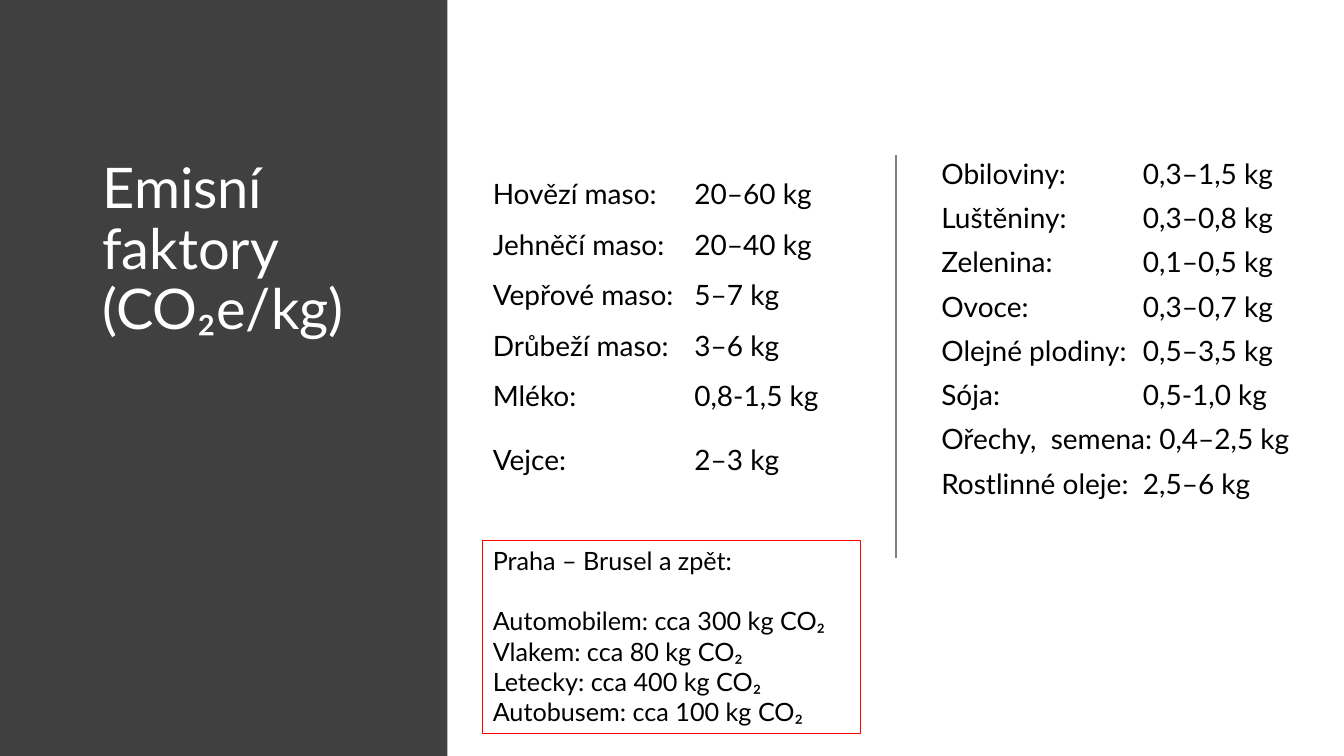
from lxml import etree
from pptx import Presentation
from pptx.dml.color import RGBColor
from pptx.enum.shapes import MSO_CONNECTOR, MSO_SHAPE
from pptx.enum.text import MSO_ANCHOR, PP_ALIGN
from pptx.oxml.ns import qn
from pptx.util import Pt

DARK = RGBColor(0x40, 0x40, 0x40)
GRAY = RGBColor(0x80, 0x80, 0x80)
RED = RGBColor(0xFF, 0, 0)
WHITE = RGBColor(0xFF, 0xFF, 0xFF)
BLACK = RGBColor(0, 0, 0)

FONT = "Lato"
TOP = 110.9
LEFT_COLUMN, RIGHT_COLUMN = 344.9, 665.3
COLUMN_WIDTH, COLUMN_HEIGHT = 270, 343.4
VALUE_TAB = 144

ANIMAL_FOODS = [
    "Hovězí maso:\t20–60 kg",
    "Jehněčí maso:\t20–40 kg",
    "Vepřové maso:\t5–7 kg",
    "Drůbeží maso:\t3–6 kg",
    "Mléko:\t0,8-1,5 kg",
    "Vejce:\t2–3 kg",
]
PLANT_FOODS = [
    "Obiloviny:\t0,3–1,5 kg",
    "Luštěniny:\t0,3–0,8 kg",
    "Zelenina:\t0,1–0,5 kg",
    "Ovoce:\t0,3–0,7 kg",
    "Olejné plodiny:\t0,5–3,5 kg",
    "Sója:\t0,5-1,0 kg",
    "Ořechy,  semena: 0,4–2,5 kg",
    "Rostlinné oleje:\t2,5–6 kg",
]
TRIPS = [
    "Praha – Brusel a zpět:",
    "Automobilem: cca 300 kg CO₂",
    "Vlakem: cca 80 kg CO₂",
    "Letecky: cca 400 kg CO₂",
    "Autobusem: cca 100 kg CO₂",
]


def add_value_tab(paragraph):
    """Put a left tab stop where the values of a food list line up."""
    properties = paragraph._p.get_or_add_pPr()
    tab_list = etree.SubElement(properties, qn("a:tabLst"))
    etree.SubElement(tab_list, qn("a:tab"), pos=str(Pt(VALUE_TAB)), algn="l")


def write_lines(shape, lines, size, color, spacing=1.0, gaps=None, tabbed=False):
    """Fill a shape with paragraphs; gaps maps a line index to its space before."""
    frame = shape.text_frame
    frame.word_wrap = True
    frame.vertical_anchor = MSO_ANCHOR.TOP
    frame.text = "\n".join(lines)
    for index, paragraph in enumerate(frame.paragraphs):
        paragraph.alignment = PP_ALIGN.LEFT
        paragraph.line_spacing = spacing
        paragraph.space_before = Pt((gaps or {}).get(index, 0))
        if tabbed:
            add_value_tab(paragraph)
        for span in paragraph.runs:
            span.font.name = FONT
            span.font.size = Pt(size)
            span.font.color.rgb = color


def add_text(page, left, width, lines, size, color, **layout):
    box = page.shapes.add_textbox(Pt(left), Pt(TOP), Pt(width), Pt(COLUMN_HEIGHT))
    write_lines(box, lines, size, color, **layout)


def add_rectangle(page, left, top, width, height, fill=None, line=None):
    shape = page.shapes.add_shape(
        MSO_SHAPE.RECTANGLE, Pt(left), Pt(top), Pt(width), Pt(height)
    )
    shape.shadow.inherit = False
    if fill is None:
        shape.fill.background()
    else:
        shape.fill.solid()
        shape.fill.fore_color.rgb = fill
    if line is None:
        shape.line.fill.background()
    else:
        shape.line.color.rgb = line
        shape.line.width = Pt(0.75)
    return shape


def add_divider(page, x, top, bottom):
    divider = page.shapes.add_connector(
        MSO_CONNECTOR.STRAIGHT, Pt(x), Pt(top), Pt(x), Pt(bottom)
    )
    divider.line.color.rgb = GRAY
    divider.line.width = Pt(1)
    etree.SubElement(divider._element.spPr, qn("a:effectLst"))


def main():
    deck = Presentation()
    deck.slide_width, deck.slide_height = Pt(960), Pt(540)
    page = deck.slides.add_slide(deck.slide_layouts[6])

    add_rectangle(page, 0, 0, 319.7, 540, fill=DARK)
    add_text(page, 66.2, 228.2, ["Emisní faktory\v(CO₂e/kg)"], 40, WHITE, spacing=0.9)

    add_text(page, LEFT_COLUMN, COLUMN_WIDTH, ANIMAL_FOODS, 20, BLACK,
             spacing=1.5, gaps={len(ANIMAL_FOODS) - 1: 10}, tabbed=True)
    add_divider(page, 640, TOP, 398.9)
    add_text(page, RIGHT_COLUMN, COLUMN_WIDTH, PLANT_FOODS, 20, BLACK,
             spacing=0.9, gaps={i: 10 for i in range(1, len(PLANT_FOODS))},
             tabbed=True)

    trip_box = add_rectangle(page, LEFT_COLUMN, 385.9, COLUMN_WIDTH, 138.2, line=RED)
    write_lines(trip_box, TRIPS, 18, BLACK, gaps={1: 21.6})

    deck.save("out.pptx")


if __name__ == "__main__":
    main()
